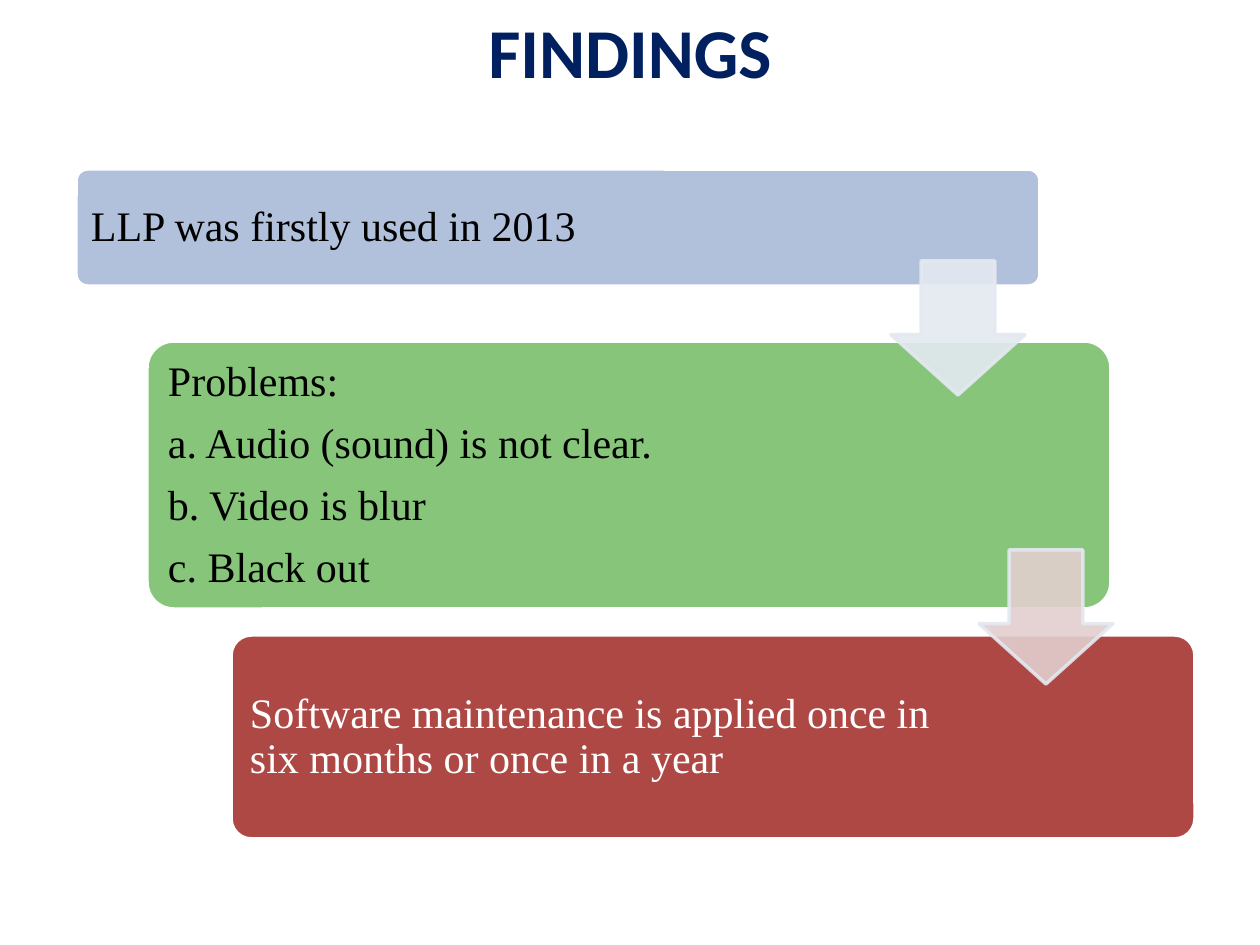
import pptx
import pptx.util
import pptx.dml.color
import pptx.enum.shapes
import pptx.enum.text
import pptx.oxml.ns
import lxml.etree

RGBColor = pptx.dml.color.RGBColor
SHAPES = pptx.enum.shapes.MSO_SHAPE
ALIGN = pptx.enum.text.PP_ALIGN

NAVY = RGBColor(0x00, 0x20, 0x60)
WHITE = RGBColor(0xFF, 0xFF, 0xFF)
BLACK = RGBColor(0x00, 0x00, 0x00)
BLUE = RGBColor(0xB2, 0xC1, 0xDB)
GREEN = RGBColor(0x87, 0xC6, 0x7A)
RED = RGBColor(0xAE, 0x48, 0x45)
PALE_BLUE = RGBColor(0xE4, 0xE9, 0xF1)
PALE_RED = RGBColor(0xE3, 0xCF, 0xCF)

PX = 914400 / 126
CARD_WIDTH = 964
ARROW_SIZE = 134
INSET = round(13 * PX)


def write(frame, lines, *, size, font, color, bold=False,
          align=ALIGN.LEFT, inset=0, line_spacing=None, space_after=0):
    """Fill a text frame with one paragraph for each line."""
    frame.word_wrap = True
    frame.vertical_anchor = pptx.enum.text.MSO_ANCHOR.MIDDLE
    frame.margin_left = frame.margin_right = inset
    frame.margin_top = frame.margin_bottom = inset
    frame.text = "\n".join(lines)
    for paragraph in frame.paragraphs:
        paragraph.alignment = align
        paragraph.line_spacing = line_spacing
        paragraph.space_after = pptx.util.Pt(space_after)
        run_font = paragraph.runs[0].font
        run_font.size = pptx.util.Pt(size)
        run_font.name = font
        run_font.bold = bold
        run_font.color.rgb = color


def add_block(preset, box, adjustments, fill, line, opacity=100):
    block = slide.shapes.add_shape(preset, *(round(n * PX) for n in box))
    block.shadow.inherit = False
    for index, value in enumerate(adjustments):
        block.adjustments[index] = value
    block.fill.solid()
    block.fill.fore_color.rgb = fill
    block.line.color.rgb = line
    block.line.width = pptx.util.Pt(2)
    if opacity < 100:
        for color in block.element.spPr.iter(pptx.oxml.ns.qn("a:srgbClr")):
            alpha = lxml.etree.SubElement(color, pptx.oxml.ns.qn("a:alpha"))
            alpha.set("val", str(opacity * 1000))


deck = pptx.Presentation()
deck.slide_width = round(1260 * PX)
deck.slide_height = round(945 * PX)
slide = deck.slides.add_slide(deck.slide_layouts[5])

heading = slide.shapes.title
heading.left, heading.top = round(63 * PX), round(16 * PX)
heading.width, heading.height = round(1134 * PX), round(69 * PX)
write(heading.text_frame, ["FINDINGS"], size=40, font="Calibri",
      color=NAVY, bold=True, align=ALIGN.CENTER)

# Each finding: left, top, height, fill, text box, text colour, alignment, lines
findings = [
    (76, 169, 117, BLUE, (78, 173, 748, 110), BLACK, ALIGN.LEFT,
     ["LLP was firstly used in 2013"]),
    (147, 341, 268, GREEN, (155, 349, 730, 253), BLACK, ALIGN.JUSTIFY,
     ["Problems:", "a. Audio (sound) is not clear.",
      "b. Video is blur", "c. Black out"]),
    (231, 635, 204, RED, (237, 641, 733, 193), WHITE, ALIGN.LEFT,
     ["Software maintenance is applied once in six months or once in a year"]),
]
for left, top, height, fill, text_area, color, align, lines in findings:
    add_block(SHAPES.ROUNDED_RECTANGLE, (left, top, CARD_WIDTH, height),
              [0.1], fill, WHITE)
    words = slide.shapes.add_textbox(*(round(n * PX) for n in text_area))
    write(words.text_frame, lines, size=24, font="Times New Roman",
          color=color, align=align, inset=INSET,
          line_spacing=0.9, space_after=9.5)

for left, top, fill in [(891, 261, PALE_BLUE), (979, 550, PALE_RED)]:
    # The preset's first adjustment is the shaft width, the second the head
    add_block(SHAPES.DOWN_ARROW, (left, top, ARROW_SIZE, ARROW_SIZE),
              [0.55, 0.45], fill, PALE_BLUE, opacity=90)

deck.save("out.pptx")
